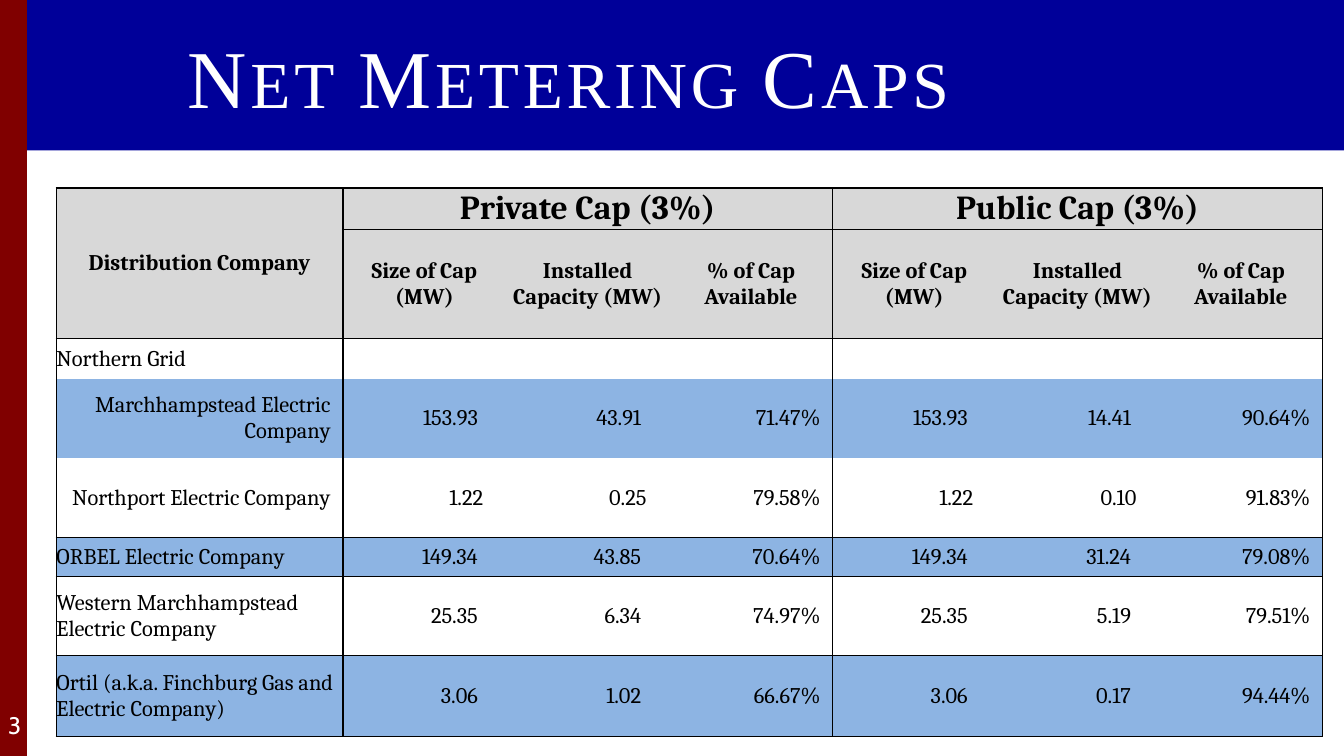
from dataclasses import dataclass

from lxml.etree import SubElement
from pptx import Presentation
from pptx.dml.color import RGBColor
from pptx.enum.shapes import MSO_SHAPE
from pptx.enum.text import MSO_ANCHOR, MSO_AUTO_SIZE, PP_ALIGN
from pptx.oxml.ns import qn
from pptx.util import Inches, Pt


@dataclass(frozen=True)
class Theme:
    banner: str = "000099"
    stripe: str = "800000"
    header: str = "D8D8D8"
    band: str = "8DB4E3"
    ink: str = "000000"
    light: str = "FFFFFF"
    title_size: int = 44
    group_size: int = 18
    number_size: int = 16
    table_size: int = 12
    title_font: str = "Times New Roman"
    table_font: str = "Cambria"
    number_font: str = "Cabin"


theme = Theme()


def write(frame, text, font, size, color, align, bold=False):
    """Put one formatted paragraph in a text frame and return its run."""
    frame.text = text
    paragraph = frame.paragraphs[0]
    paragraph.alignment = align
    run = paragraph.runs[0]
    run.font.name, run.font.size, run.font.bold = font, Pt(size), bold
    run.font.color.rgb = RGBColor.from_string(color)
    return run


def set_border(cell, side, points):
    """Draw one cell edge, or clear it when points is 0."""
    line = SubElement(cell._tc.get_or_add_tcPr(), qn(f"a:{side}"), w=str(Pt(points)))
    if points:
        fill = SubElement(line, qn("a:solidFill"))
        SubElement(fill, qn("a:srgbClr"), val=theme.ink)
    else:
        SubElement(line, qn("a:noFill"))


# Widescreen 16:9 slide
prs = Presentation()
prs.slide_width = Inches(10)
prs.slide_height = prs.slide_width * 9 // 16
slide = prs.slides.add_slide(prs.slide_layouts[5])

# Title
title = slide.shapes.title
title.left, title.top = Inches(0.35), Inches(0.09)
title.width, title.height = Inches(8.23), Inches(0.94)
title.text_frame.auto_size = MSO_AUTO_SIZE.NONE
title.text_frame.vertical_anchor = MSO_ANCHOR.MIDDLE
title_run = write(title.text_frame, "Net Metering Caps", theme.title_font,
                  theme.title_size, theme.light, PP_ALIGN.CENTER)
title_run.font._element.set("cap", "small")
title_run.font._element.set("spc", "200")

# Banner and side stripe, behind the title
for left, width, height, color in [
        (Inches(0.2), Inches(9.8), Inches(1.12), theme.banner),
        (0, Inches(0.2), prs.slide_height, theme.stripe)]:
    bar = slide.shapes.add_shape(MSO_SHAPE.RECTANGLE, left, 0, width, height)
    bar.shadow.inherit = False
    bar.fill.solid()
    bar.fill.fore_color.rgb = RGBColor.from_string(color)
    bar.line.fill.background()
    title.element.addprevious(bar.element)

# Slide number
number = slide.shapes.add_textbox(0, Inches(5.23), Inches(0.17), Inches(0.3)).text_frame
number.margin_left = Inches(0.05)
number.margin_right = number.margin_top = number.margin_bottom = 0
number.word_wrap = True
number.vertical_anchor = MSO_ANCHOR.MIDDLE
number_run = write(number, "3", theme.number_font, theme.number_size,
                   theme.light, PP_ALIGN.CENTER)
number_run.font._element.set("cap", "small")

# Table content
measures = ["Size of Cap (MW)", "Installed Capacity (MW)", "% of Cap Available"]
rows = [
    ["Distribution Company", "Private Cap (3%)", "", "", "Public Cap (3%)", "", ""],
    ["", *measures, *measures],
    ["Northern Grid", "", "", "", "", "", ""],
    ["Marchhampstead Electric Company",
     "153.93", "43.91", "71.47%", "153.93", "14.41", "90.64%"],
    ["Northport Electric Company", "1.22", "0.25", "79.58%", "1.22", "0.10", "91.83%"],
    ["ORBEL Electric Company",
     "149.34", "43.85", "70.64%", "149.34", "31.24", "79.08%"],
    ["Western Marchhampstead Electric Company",
     "25.35", "6.34", "74.97%", "25.35", "5.19", "79.51%"],
    ["Ortil (a.k.a. Finchburg Gas and Electric Company)",
     "3.06", "1.02", "66.67%", "3.06", "0.17", "94.44%"],
]
row_heights = [0.31, 0.81, 0.3, 0.59, 0.59, 0.29, 0.59, 0.6]
subsidiary_rows = (3, 4)
northport_row = 4
banded_rows = (3, 5, 7)
group_columns = (1, 4)
percent_columns = (3, 6)

# Line weights by grid boundary
column_lines = [1, 1, 0, 0, 1, 0, 0, 1]
row_lines = [1, 0.5, 0.5, 0, 0, 0.5, 0.5, 0.5, 1]

caps = slide.shapes.add_table(len(rows), 7, Inches(0.42), Inches(1.4),
                              Inches(9.42), Inches(4.08)).table
caps.first_row = caps.horz_banding = False
for c, column in enumerate(caps.columns):
    column.width = Inches(2.13) if c == 0 else Inches(7.29) // 6
for r, height in enumerate(row_heights):
    caps.rows[r].height = Inches(height)

# Cells
for r, values in enumerate(rows):
    is_header = r < 2
    for c, value in enumerate(values):
        cell = caps.cell(r, c)
        cell.margin_left = cell.margin_right = cell.margin_top = cell.margin_bottom = 0
        cell.vertical_anchor = MSO_ANCHOR.MIDDLE
        right = c + 3 if r == 0 and c in group_columns else c + 1
        for side, points in [("lnL", column_lines[c]), ("lnR", column_lines[right]),
                             ("lnT", row_lines[r]), ("lnB", row_lines[r + 1])]:
            set_border(cell, side, points)

        if is_header or r in banded_rows:
            cell.fill.solid()
            cell.fill.fore_color.rgb = RGBColor.from_string(
                theme.header if is_header else theme.band)
        else:
            cell.fill.background()

        if not value:
            SubElement(cell.text_frame.paragraphs[0]._p, qn("a:endParaRPr"),
                       sz=str(theme.table_size * 100))
            continue

        if is_header:
            align = PP_ALIGN.CENTER
        elif c == 0 and r not in subsidiary_rows:
            align = PP_ALIGN.LEFT
        else:
            align = PP_ALIGN.RIGHT
            if c == 0 or c in percent_columns:
                cell.margin_right = Inches(0.09)
            else:
                cell.margin_right = Inches(0.17 if r == northport_row else 0.21)
        size = theme.group_size if r == 0 and c > 0 else theme.table_size
        write(cell.text_frame, value, theme.table_font, size, theme.ink, align, is_header)

# Merged headings
caps.cell(0, 0).merge(caps.cell(1, 0))
for first in group_columns:
    caps.cell(0, first).merge(caps.cell(0, first + 2))

prs.save("out.pptx")
